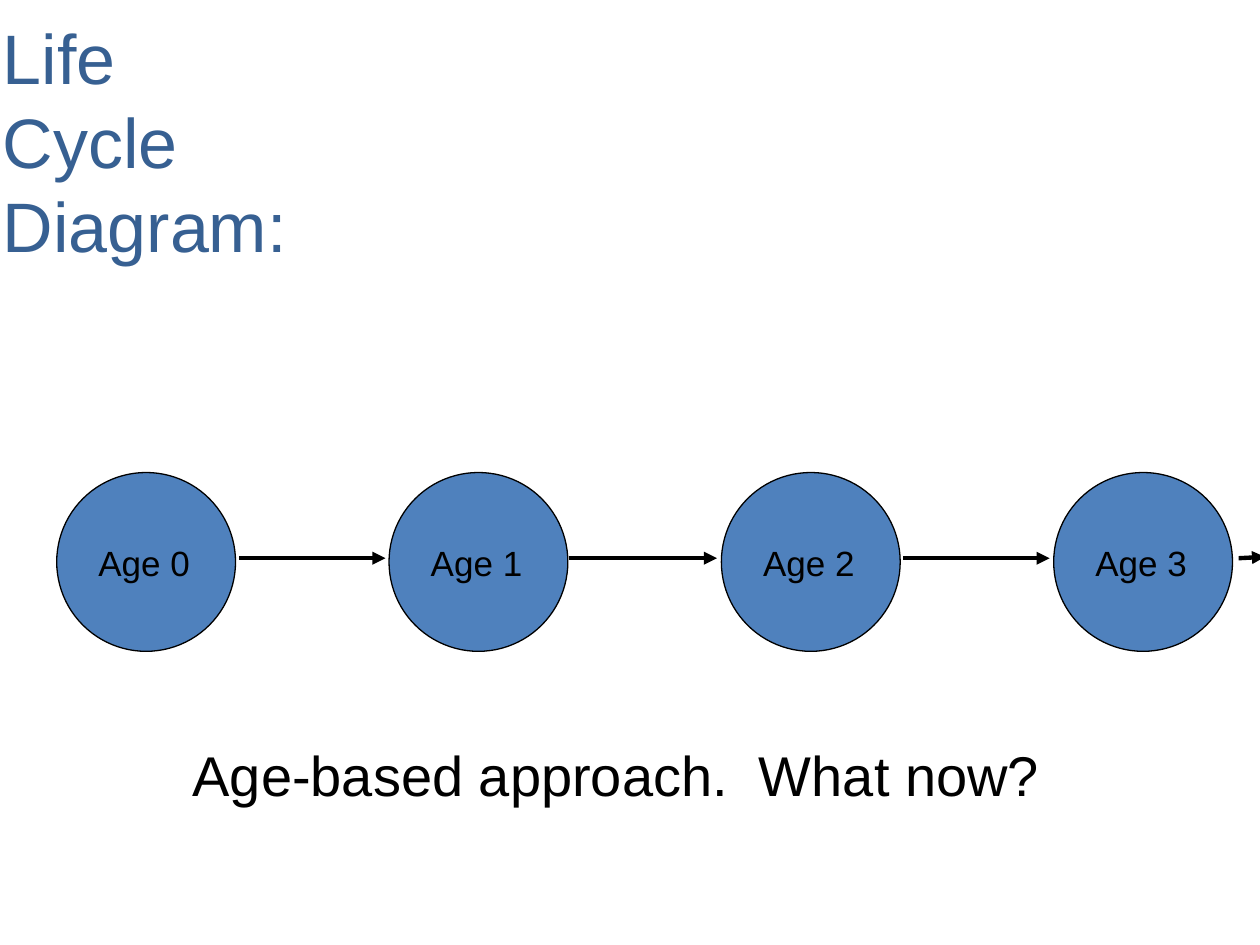
from lxml.etree import SubElement as Sub
from pptx import Presentation
from pptx.dml.color import RGBColor as Rgb
from pptx.enum.shapes import MSO_CONNECTOR as Conn, MSO_SHAPE as Kind
from pptx.enum.text import PP_ALIGN as Align
from pptx.oxml.ns import qn
from pptx.util import Pt

BLACK = Rgb(0x00, 0x00, 0x00)
BLUE = Rgb(0x4F, 0x81, 0xBD)
NAVY = Rgb(0x37, 0x60, 0x92)

LEFT, STEP, SIZE = 32.4, 189.9, 102.2
MID = 319
ARROWS = [
    (136.8, MID, 220.3, MID),
    (325.4, MID, 409.7, MID),
    (516.2, MID, 599.8, MID),
    (707.8, MID, 722.9, 318.2),
]


def put(obj, vals):
    for key, val in vals.items():
        setattr(obj, key, val)


def add_text(shapes, box, lines, size, color, frame, para):
    text = shapes.add_textbox(*map(Pt, box)).text_frame
    put(text, {"word_wrap": True, **frame})
    text.text = "\n".join(lines)
    for item in text.paragraphs:
        put(item, para)
        put(item.runs[0].font, {"name": "Arial", "size": Pt(size)})
        item.runs[0].font.color.rgb = color


def add_stage(shapes, age):
    left = LEFT + age * STEP
    group = shapes.add_group_shape().shapes
    disc = group.add_shape(Kind.OVAL, Pt(left), Pt(270), Pt(SIZE), Pt(SIZE))
    disc.shadow.inherit = False
    disc.fill.solid()
    disc.fill.fore_color.rgb = BLUE
    disc.line.color.rgb = BLACK
    disc.line.width = Pt(0.75)
    add_text(group, (left - 2.2, 303.8, 104.4, 31), [f"Age {age}"], 20, BLACK,
             {"margin_top": Pt(5.5)}, {"alignment": Align.CENTER})


def add_arrow(shapes, ends):
    arrow = shapes.add_connector(Conn.STRAIGHT, *map(Pt, ends))
    arrow.line.color.rgb = BLACK
    arrow.line.width = Pt(2.5)
    Sub(arrow.line._get_or_add_ln(), qn("a:tailEnd"), type="triangle")
    Sub(arrow._element.spPr, qn("a:effectLst"))


def main():
    deck = Presentation()
    put(deck, {"slide_width": Pt(720), "slide_height": Pt(540)})
    shapes = deck.slides.add_slide(deck.slide_layouts[6]).shapes
    add_text(shapes, (-2.9, 2.9, 189.4, 104.4), ["Life Cycle", "Diagram:"],
             40, NAVY,
             {"margin_left": Pt(4.6), "margin_right": Pt(14),
              "margin_top": Pt(5.2)},
             {"line_spacing": Pt(48)})
    for age in range(4):
        add_stage(shapes, age)
    for ends in ARROWS:
        add_arrow(shapes, ends)
    add_text(shapes, (103, 416.2, 509, 45.4),
             ["Age-based approach.  What now?"], 32, BLACK,
             {"margin_top": Pt(7)}, {})
    deck.save("out.pptx")


if __name__ == "__main__":
    main()
